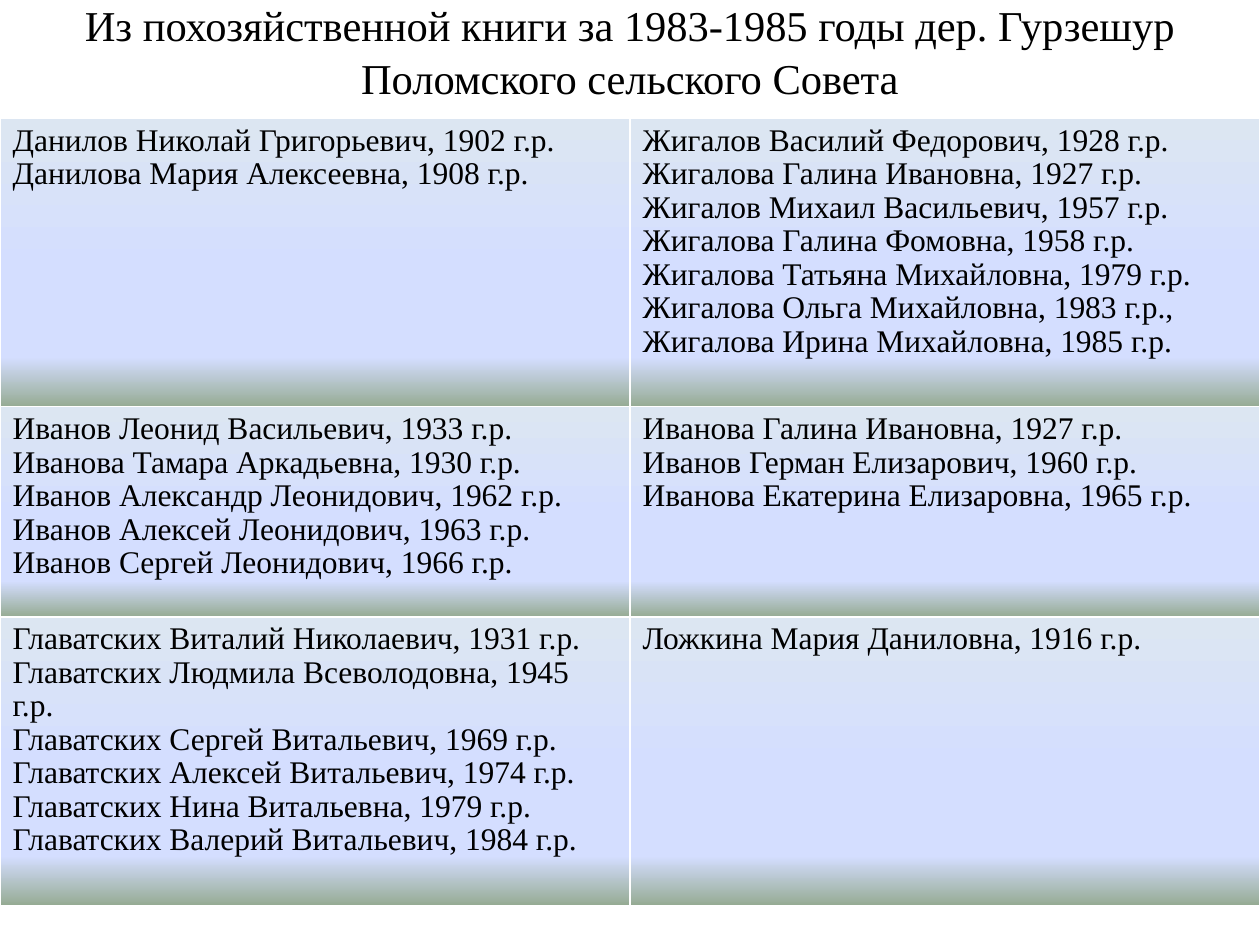
from dataclasses import dataclass

from lxml import etree
from pptx import Presentation
from pptx.dml.color import RGBColor
from pptx.enum.text import MSO_ANCHOR, MSO_AUTO_SIZE, PP_ALIGN
from pptx.oxml.ns import qn
from pptx.util import Inches, Pt

MIDDLE = MSO_ANCHOR.MIDDLE
NO_AUTOFIT = MSO_AUTO_SIZE.NONE
CENTER = PP_ALIGN.CENTER

SLIDE_WIDTH, SLIDE_HEIGHT = Inches(10), Inches(7.5)
TITLE_ONLY_LAYOUT = 5


@dataclass(frozen=True)
class Theme:
    font: str = "Times New Roman"
    text: RGBColor = RGBColor(0, 0, 0)
    title_size: float = 24.3
    body_size: float = 18
    title_spacing: float = 1.04
    body_spacing: float = 0.96
    cell_gradient: tuple = ((0, "DCE6F2"), (53, "D4DEFF"), (83, "D4DEFF"), (100, "96AB94"))


THEME = Theme()

TITLE = "Из похозяйственной книги за 1983-1985 годы дер. Гурзешур\vПоломского сельского Совета"

ROW_HEIGHTS = (2.29, 1.67, 2.29)
HOUSEHOLDS = (
    (
        ("Данилов Николай Григорьевич, 1902 г.р.",
         "Данилова Мария Алексеевна, 1908 г.р."),
        ("Жигалов Василий Федорович, 1928 г.р.",
         "Жигалова Галина Ивановна, 1927 г.р.",
         "Жигалов Михаил Васильевич, 1957 г.р.",
         "Жигалова Галина Фомовна, 1958 г.р.",
         "Жигалова Татьяна Михайловна, 1979 г.р.",
         "Жигалова Ольга Михайловна, 1983 г.р.,",
         "Жигалова Ирина Михайловна, 1985 г.р."),
    ),
    (
        ("Иванов Леонид Васильевич, 1933 г.р.",
         "Иванова Тамара Аркадьевна, 1930 г.р.",
         "Иванов Александр Леонидович, 1962 г.р.",
         "Иванов Алексей Леонидович, 1963 г.р.",
         "Иванов Сергей Леонидович, 1966 г.р."),
        ("Иванова Галина Ивановна, 1927 г.р.",
         "Иванов Герман Елизарович, 1960 г.р.",
         "Иванова Екатерина Елизаровна, 1965 г.р."),
    ),
    (
        ("Главатских Виталий Николаевич, 1931 г.р.",
         "Главатских Людмила Всеволодовна, 1945 г.р.",
         "Главатских Сергей Витальевич, 1969 г.р.",
         "Главатских Алексей Витальевич, 1974 г.р.",
         "Главатских Нина Витальевна, 1979 г.р.",
         "Главатских Валерий Витальевич, 1984 г.р."),
        ("Ложкина Мария Даниловна, 1916 г.р.",),
    ),
)


def share_box(left, top, width, height):
    """Turn shares of the slide into a box of lengths."""
    return (int(SLIDE_WIDTH * left), int(SLIDE_HEIGHT * top),
            int(SLIDE_WIDTH * width), int(SLIDE_HEIGHT * height))


def format_text(text_frame, size, spacing):
    for paragraph in text_frame.paragraphs:
        paragraph.line_spacing = spacing
        for run in paragraph.runs:
            run.font.name = THEME.font
            run.font.size = Pt(size)
            run.font.bold = False
            run.font.color.rgb = THEME.text


def fill_with_gradient(cell):
    """Give the cell a top-to-bottom gradient with all the theme's stops."""
    gradient = etree.SubElement(cell._tc.get_or_add_tcPr(), qn("a:gradFill"))
    stops = etree.SubElement(gradient, qn("a:gsLst"))
    for percent, colour in THEME.cell_gradient:
        stop = etree.SubElement(stops, qn("a:gs"), pos=str(percent * 1000))
        etree.SubElement(stop, qn("a:srgbClr"), val=colour)
    etree.SubElement(gradient, qn("a:lin"), ang="5400000", scaled="0")


def place_title(slide, box):
    title = slide.shapes.title
    title.left, title.top, title.width, title.height = box
    text_frame = title.text_frame
    text_frame.text = TITLE
    text_frame.word_wrap = True
    text_frame.auto_size = NO_AUTOFIT
    text_frame.vertical_anchor = MIDDLE
    text_frame.margin_top = text_frame.margin_bottom = 0
    text_frame.paragraphs[0].alignment = CENTER
    format_text(text_frame, THEME.title_size, THEME.title_spacing)


def place_households(slide, box):
    height = box[3]
    table = slide.shapes.add_table(len(HOUSEHOLDS), len(HOUSEHOLDS[0]), *box).table
    table.horz_banding = False
    for row, share, families in zip(table.rows, ROW_HEIGHTS, HOUSEHOLDS):
        row.height = int(height * share / sum(ROW_HEIGHTS))
        for cell, people in zip(row.cells, families):
            cell.text_frame.text = "\n".join(people)
            format_text(cell.text_frame, THEME.body_size, THEME.body_spacing)
            fill_with_gradient(cell)


def main():
    presentation = Presentation()
    presentation.slide_width, presentation.slide_height = SLIDE_WIDTH, SLIDE_HEIGHT
    slide = presentation.slides.add_slide(presentation.slide_layouts[TITLE_ONLY_LAYOUT])
    place_title(slide, share_box(0.05, 0, 0.9, 0.105))
    place_households(slide, share_box(0, 0.125, 1, 0.833))
    presentation.save("out.pptx")


if __name__ == "__main__":
    main()
